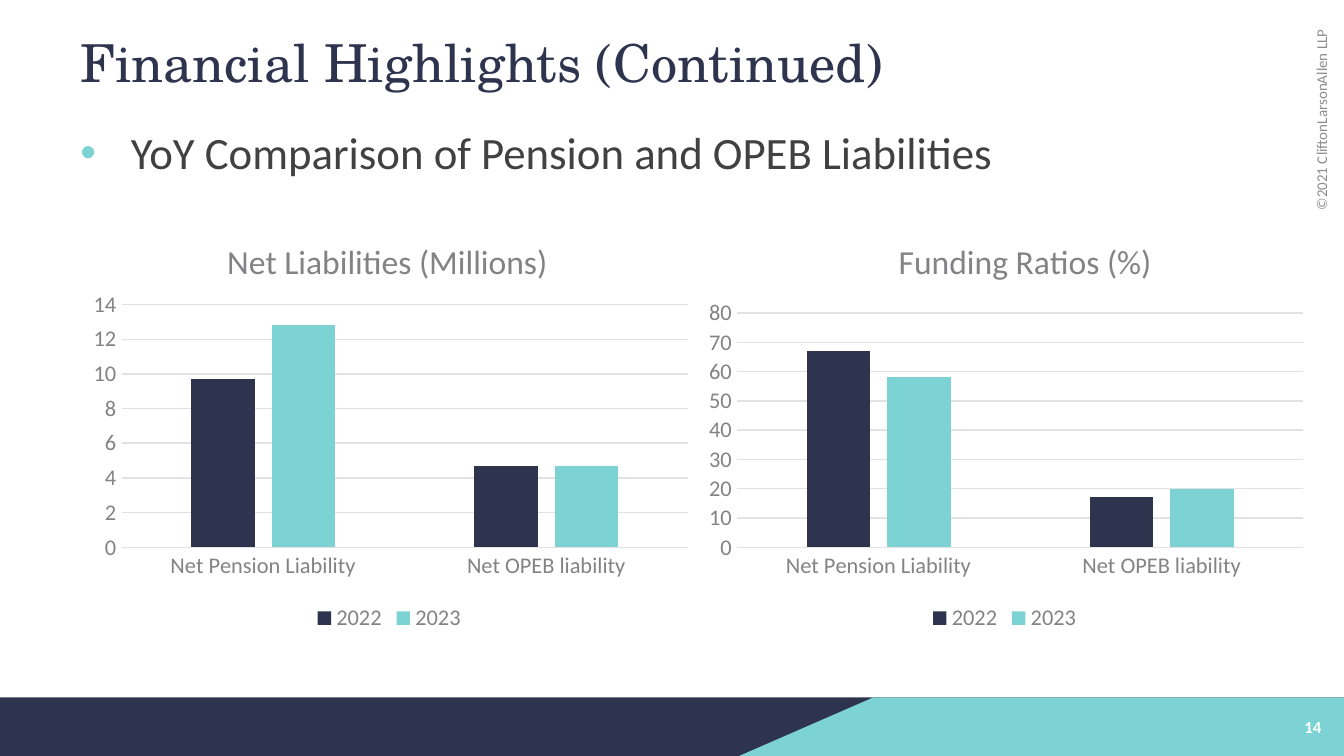
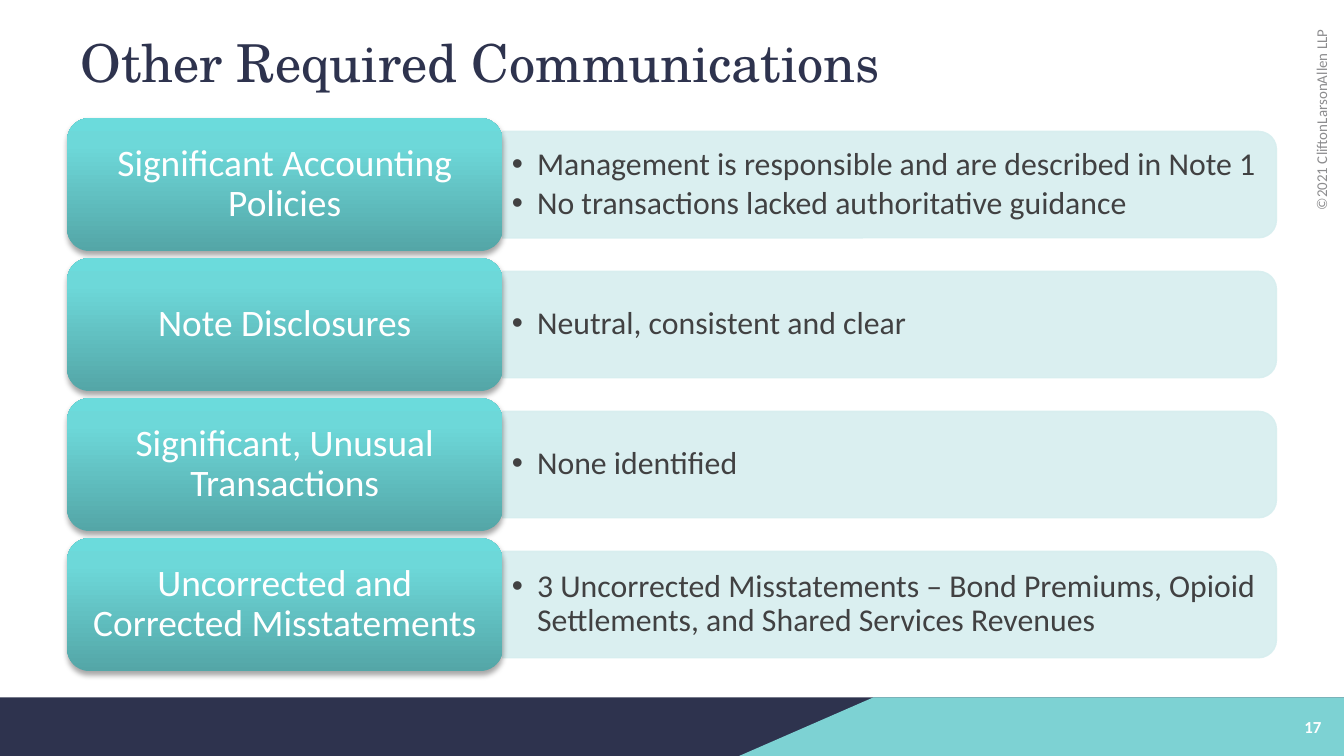
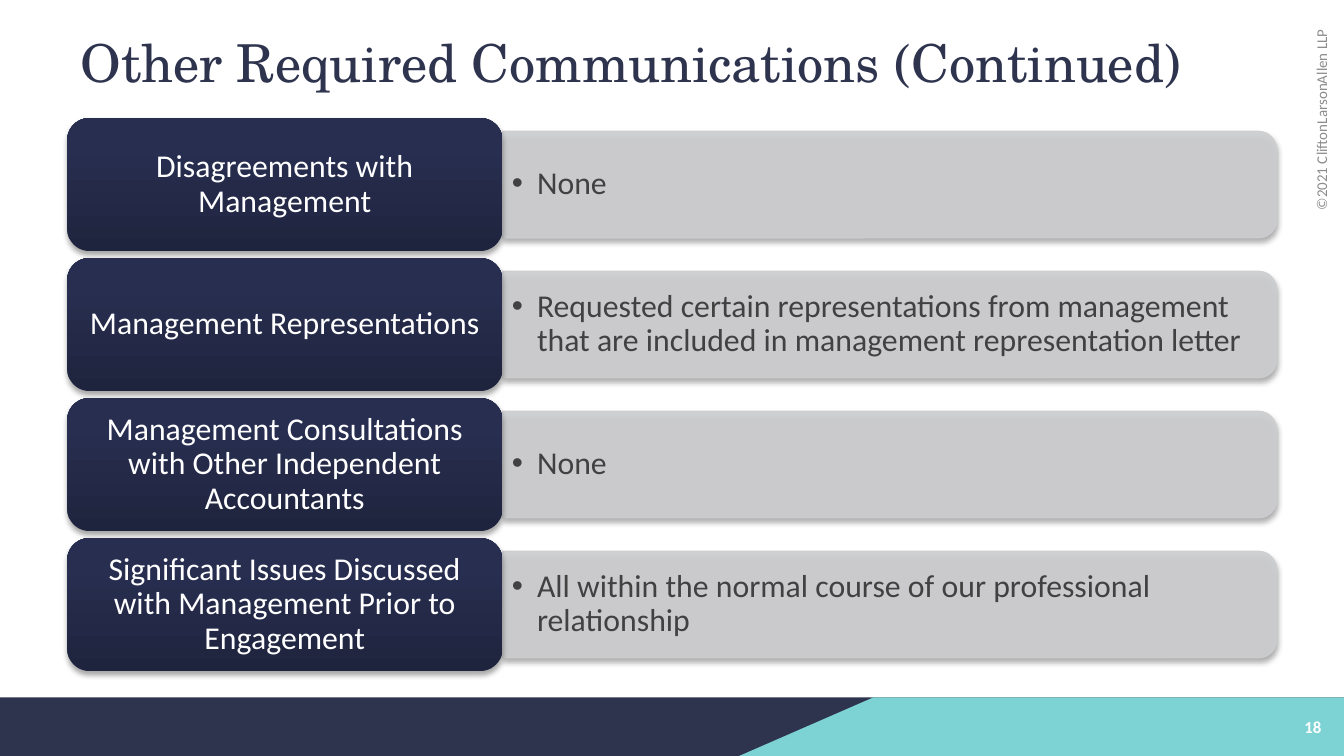
import pptx
import pptx.chart.data
import pptx.dml.color
import pptx.enum.chart
import pptx.enum.shapes
import pptx.enum.text
import pptx.oxml.ns
import pptx.util
import lxml.etree

Pt = pptx.util.Pt
RGB = pptx.dml.color.RGBColor
qn = pptx.oxml.ns.qn
SHAPE = pptx.enum.shapes.MSO_SHAPE
ALIGN = pptx.enum.text.PP_ALIGN
MIDDLE = pptx.enum.text.MSO_ANCHOR.MIDDLE

# Colours and text styles
NAVY = RGB(0x2E, 0x33, 0x4E)
TEAL = RGB(0x7D, 0xD2, 0xD3)
INK = RGB(0x41, 0x41, 0x42)
GRAY = RGB(0x83, 0x83, 0x85)
COPYRIGHT_GRAY = RGB(0x8C, 0x8C, 0x8E)
GRID_GRAY = RGB(0xE2, 0xE2, 0xE3)
PALE_TEAL = RGB(0xD7, 0xEE, 0xEF)
PALE_GRAY = RGB(0xCD, 0xCE, 0xD0)
WHITE = RGB(0xFF, 0xFF, 0xFF)
TEAL_STOPS = [(0, "54A6A7"), (80, "6DD8D9"), (100, "6BDBDC")]
NAVY_STOPS = [(0, "1F243E"), (80, "282E50"), (100, "272E51")]

TITLE = {"name": "TeX Gyre Schola", "size": Pt(28), "color": NAVY}
LEAD = {"name": "Calibri", "size": Pt(24), "color": INK}
DETAIL = {"name": "Calibri", "size": Pt(17), "color": INK}
PAGE_NUMBER = {"name": "Calibri", "size": Pt(9), "color": WHITE, "bold": True}
COPYRIGHT = {"name": "Calibri", "size": Pt(8), "color": COPYRIGHT_GRAY}
CHART_TITLE = {"name": "Calibri", "size": Pt(18), "color": GRAY, "bold": False}
CHART_BASE = {"name": "Calibri", "size": Pt(10), "color": INK}
CHART_LABEL = {"name": "Calibri", "size": Pt(12), "color": GRAY}

# Content
COPYRIGHT_LINE = "©2021 CliftonLarsonAllen LLP"
LEAD_LINE = "YoY Comparison of Pension and OPEB Liabilities"
CATEGORIES = ["Net Pension Liability", "Net OPEB liability"]
CHARTS = [
    {"title": "Net Liabilities (Millions)", "left": 41.8, "top_value": 14, "step": 2,
     "series": [("2022", [9.7, 4.7], NAVY), ("2023", [12.8, 4.7], TEAL)],
     "title_at": {"x": 0.23, "y": 0.05},
     "plot_at": {"x": 0.07, "y": 0.22, "w": 0.91, "h": 0.57}},
    {"title": "Funding Ratios (%)", "left": 371.5, "top_value": 80, "step": 10,
     "series": [("2022", [67, 17], NAVY), ("2023", [58, 20], TEAL)],
     "title_at": {"x": 0.32, "y": 0.05},
     "plot_at": {"x": 0.07, "y": 0.24, "w": 0.91, "h": 0.55}},
]
BOARDS = [
    {"title": "Other Required Communications", "number": "17",
     "stops": TEAL_STOPS, "panel": PALE_TEAL, "panel_shadow": False,
     "label_size": 20, "label_inset": 6,
     "rows": [
         ("Significant Accounting Policies",
          ["Management is responsible and are described in Note 1",
           "No transactions lacked authoritative guidance"]),
         ("Note Disclosures", ["Neutral, consistent and clear"]),
         ("Significant, Unusual Transactions", ["None identified"]),
         ("Uncorrected and Corrected Misstatements",
          ["3 Uncorrected Misstatements – Bond Premiums, Opioid Settlements, "
           "and Shared Services Revenues"]),
     ]},
    {"title": "Other Required Communications (Continued)", "number": "18",
     "stops": NAVY_STOPS, "panel": PALE_GRAY, "panel_shadow": True,
     "label_size": 17, "label_inset": 5,
     "rows": [
         ("Disagreements with Management", ["None"]),
         ("Management Representations",
          ["Requested certain representations from management that are included "
           "in management representation letter"]),
         ("Management Consultations with Other Independent Accountants", ["None"]),
         ("Significant Issues Discussed with Management Prior to Engagement",
          ["All within the normal course of our professional relationship"]),
     ]},
]

# Layout, in points
PAGE_WIDTH, PAGE_HEIGHT = 720, 405
BAND_TOP = 373.6
ROW_TOP, ROW_PITCH = 63.3, 75
CARD_LEFT, CARD_WIDTH, CARD_HEIGHT = 36, 233.2, 71.2
PANEL_LEFT, PANEL_WIDTH, PANEL_HEIGHT = 269.2, 414.6, 57


def points(*values):
    return [Pt(value) for value in values]


def style_font(font, values):
    for key, value in values.items():
        if key == "color":
            font.color.rgb = value
        else:
            setattr(font, key, value)


def add_bullet(para, indent, color=None):
    properties = para._p.get_or_add_pPr()
    properties.set("marL", str(Pt(indent)))
    properties.set("indent", str(-Pt(indent)))
    if color is not None:
        holder = lxml.etree.SubElement(properties, qn("a:buClr"))
        lxml.etree.SubElement(holder, qn("a:srgbClr"), val=str(color))
    lxml.etree.SubElement(properties, qn("a:buFont"), typeface="Arial")
    lxml.etree.SubElement(properties, qn("a:buChar"), char="•")


def write(box, lines, font, paragraph=None, bullet=None, frame=None):
    """Fill a box with one paragraph per line."""
    box.text_frame.word_wrap = True
    for key, value in (frame or {}).items():
        setattr(box.text_frame, key, value)
    for index, line in enumerate(lines):
        para = box.text_frame.paragraphs[0] if index == 0 else box.text_frame.add_paragraph()
        for key, value in (paragraph or {}).items():
            setattr(para, key, value)
        if bullet:
            add_bullet(para, **bullet)
        span = para.add_run()
        span.text = line
        style_font(span.font, font)


def add_text(page, place, lines, font, **options):
    box = page.shapes.add_textbox(*points(*place))
    write(box, lines, font, **options)
    return box


def insets(side, edge):
    return {"margin_left": Pt(side), "margin_right": Pt(side),
            "margin_top": Pt(edge), "margin_bottom": Pt(edge), "vertical_anchor": MIDDLE}


def fill_plain(shape, color):
    shape.shadow.inherit = False
    shape.fill.solid()
    shape.fill.fore_color.rgb = color
    shape.line.fill.background()


def add_shadow(shape):
    effects = shape._element.spPr.find(qn("a:effectLst"))
    shadow = lxml.etree.SubElement(
        effects, qn("a:outerShdw"), blurRad=str(Pt(3.1)), dist=str(Pt(1.8)),
        dir="5400000", rotWithShape="0")
    color = lxml.etree.SubElement(shadow, qn("a:srgbClr"), val="000000")
    lxml.etree.SubElement(color, qn("a:alpha"), val="35000")


def start_page(deck, title, number):
    """Add a slide with its title, bottom band, copyright line and number."""
    page = deck.slides.add_slide(deck.slide_layouts[5])
    band = page.shapes.add_shape(
        SHAPE.RECTANGLE, *points(0, BAND_TOP, PAGE_WIDTH, PAGE_HEIGHT - BAND_TOP))
    fill_plain(band, NAVY)
    outline = page.shapes.build_freeform(*points(468, BAND_TOP), scale=1.0)
    outline.add_line_segments([
        points(PAGE_WIDTH, BAND_TOP), points(PAGE_WIDTH, PAGE_HEIGHT),
        points(396, PAGE_HEIGHT)], close=True)
    fill_plain(outline.convert_to_shape(), TEAL)

    heading = page.shapes.title
    heading.left, heading.top, heading.width, heading.height = points(36, 5.8, 648, 54)
    write(heading, [title], TITLE, paragraph={"alignment": ALIGN.LEFT},
          frame={"vertical_anchor": MIDDLE, "auto_size": pptx.enum.text.MSO_AUTO_SIZE.NONE})
    corner = {"paragraph": {"alignment": ALIGN.RIGHT}, "frame": {"vertical_anchor": MIDDLE}}
    add_text(page, (638, 66.2, 139.6, 24.5), [COPYRIGHT_LINE], COPYRIGHT, **corner).rotation = 270
    add_text(page, (684, 375.8, 31, 27.4), [number], PAGE_NUMBER, **corner)
    return page


def set_layout(parent, position, **values):
    """Place a chart part by fractions of the chart's size."""
    old = parent.find(qn("c:layout"))
    if old is not None:
        parent.remove(old)
    layout = lxml.etree.Element(qn("c:layout"))
    manual = lxml.etree.SubElement(layout, qn("c:manualLayout"))
    for key, value in values.items():
        lxml.etree.SubElement(manual, qn("c:" + key), val=str(value))
    parent.insert(position, layout)


def add_column_chart(page, spec):
    data = pptx.chart.data.CategoryChartData()
    data.categories = CATEGORIES
    for name, values, _ in spec["series"]:
        data.add_series(name, values)
    chart = page.shapes.add_chart(
        pptx.enum.chart.XL_CHART_TYPE.COLUMN_CLUSTERED,
        *points(spec["left"], 113, 333.4, 228.2), data).chart
    style_font(chart.font, CHART_BASE)

    # Title and legend
    chart.has_title = True
    para = chart.chart_title.text_frame.paragraphs[0]
    span = para.add_run()
    span.text = spec["title"]
    style_font(span.font, CHART_TITLE)
    chart.has_legend = True
    chart.legend.position = pptx.enum.chart.XL_LEGEND_POSITION.BOTTOM
    chart.legend.include_in_layout = False
    style_font(chart.legend.font, CHART_LABEL)

    # Axes
    no_tick = pptx.enum.chart.XL_TICK_MARK.NONE
    scale = chart.value_axis
    for axis in (chart.category_axis, scale):
        axis.major_tick_mark = axis.minor_tick_mark = no_tick
        style_font(axis.tick_labels.font, CHART_LABEL)
    scale.minimum_scale, scale.maximum_scale = 0, spec["top_value"]
    scale.major_unit = spec["step"]
    scale.format.line.fill.background()
    for line in (chart.category_axis.format.line, scale.major_gridlines.format.line):
        line.color.rgb = GRID_GRAY
        line.width = Pt(0.75)

    # Columns
    plot = chart.plots[0]
    plot.gap_width, plot.overlap, plot.vary_by_categories = 219, -27, False
    for series, (_, _, color) in zip(plot.series, spec["series"]):
        series.format.fill.solid()
        series.format.fill.fore_color.rgb = color

    edges = {"xMode": "edge", "yMode": "edge"}
    set_layout(chart.chart_title._element, 1, **edges, **spec["title_at"])
    plot_area = chart._chartSpace.find(".//" + qn("c:plotArea"))
    set_layout(plot_area, 0, layoutTarget="inner", **edges, **spec["plot_at"])


def add_panel(page, middle, color, shadowed):
    """Add the bar right of a card: an upright tab turned on its side."""
    left = PANEL_LEFT + (PANEL_WIDTH - PANEL_HEIGHT) / 2
    panel = page.shapes.add_shape(
        SHAPE.ROUND_2_SAME_RECTANGLE,
        *points(left, middle - PANEL_WIDTH / 2, PANEL_HEIGHT, PANEL_WIDTH))
    panel.rotation = 90
    fill_plain(panel, color)
    panel.line.color.rgb = color
    panel.line.width = Pt(0.75)
    for tint in list(panel._element.spPr.iter(qn("a:srgbClr"))):
        lxml.etree.SubElement(tint, qn("a:alpha"), val="90000")
    if shadowed:
        add_shadow(panel)


def add_card(page, top, stops):
    card = page.shapes.add_shape(
        SHAPE.ROUNDED_RECTANGLE, *points(CARD_LEFT, top, CARD_WIDTH, CARD_HEIGHT))
    fill_plain(card, WHITE)
    card.fill.gradient()
    card.fill.gradient_angle = 90
    stop_list = card._element.spPr.find(".//" + qn("a:gsLst"))
    stop_list.clear()
    for percent, color in stops:
        stop = lxml.etree.SubElement(stop_list, qn("a:gs"), pos=str(percent * 1000))
        lxml.etree.SubElement(stop, qn("a:srgbClr"), val=color)
    add_shadow(card)


def add_row(page, top, label, details, board):
    middle = top + CARD_HEIGHT / 2
    add_panel(page, middle, board["panel"], board["panel_shadow"])
    add_text(page, (PANEL_LEFT, middle - 25.6, 411.8, 51.2), details, DETAIL,
             paragraph={"level": 1, "line_spacing": 0.9, "space_after": Pt(2.5)},
             bullet={"indent": 13.5}, frame=insets(5, 2.7))
    add_card(page, top, board["stops"])
    add_text(page, (CARD_LEFT + 3.5, top + 3.5, CARD_WIDTH - 7, CARD_HEIGHT - 7), [label],
             {**DETAIL, "size": Pt(board["label_size"]), "color": WHITE},
             paragraph={"alignment": ALIGN.CENTER, "line_spacing": 0.9},
             frame=insets(board["label_inset"], 2.7))


def main():
    deck = pptx.Presentation()
    deck.slide_width, deck.slide_height = points(PAGE_WIDTH, PAGE_HEIGHT)

    # Liabilities charts
    page = start_page(deck, "Financial Highlights (Continued)", "14")
    add_text(page, (36, 63.3, 662.4, 296), [LEAD_LINE], LEAD,
             bullet={"indent": 27, "color": TEAL})
    for spec in CHARTS:
        add_column_chart(page, spec)

    # Boards of labelled rows
    for board in BOARDS:
        page = start_page(deck, board["title"], board["number"])
        for index, (label, details) in enumerate(board["rows"]):
            add_row(page, ROW_TOP + index * ROW_PITCH, label, details, board)

    deck.save("out.pptx")


if __name__ == "__main__":
    main()
